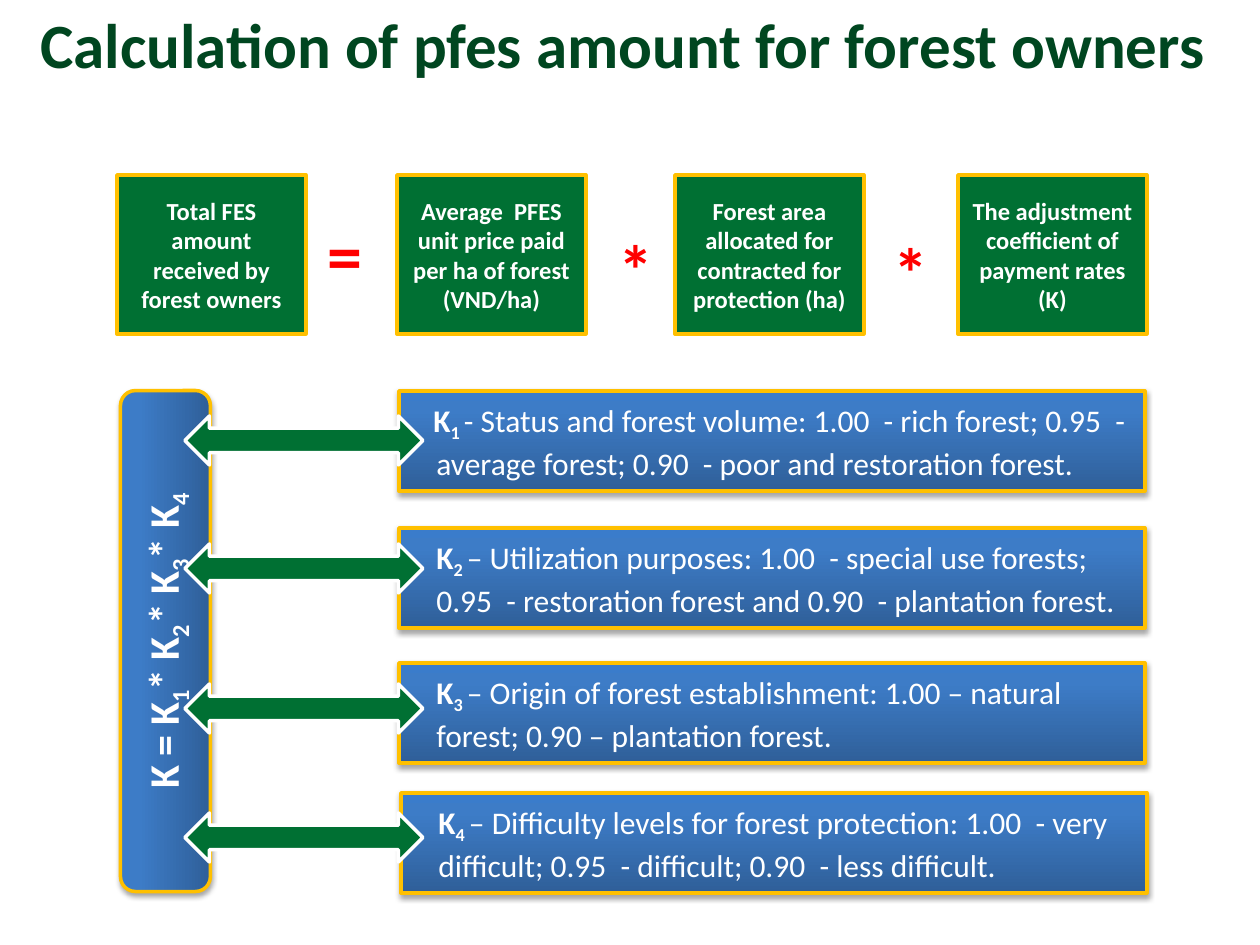
"""Build a slide explaining how the PFES amount for forest owners is calculated."""
import pptx
import pptx.dml.color
import pptx.enum.shapes
import pptx.enum.text
import pptx.oxml.ns
import pptx.util
from lxml import etree

SHAPE = pptx.enum.shapes.MSO_SHAPE
ALIGN = pptx.enum.text.PP_ALIGN
ANCHOR = pptx.enum.text.MSO_ANCHOR
qn = pptx.oxml.ns.qn

THEME = {
    "font": "Calibri",
    "green": "007033", "title": "004620", "gold": "FFC000",
    "white": "FFFFFF", "red": "FF0000", "shadow": "000000",
    "blues": [(0, "2F5F99"), (80, "3D7CC7"), (100, "3A7CCB")],
    "title_size": 36, "term_size": 14, "operator_size": 40,
    "factor_size": 18, "formula_size": 24, "line": 2,
}

TITLE = "Calculation of pfes amount for forest owners "
TERMS = [
    (117, "Total FES amount received by forest owners"),
    (397, "Average  PFES unit price paid per ha of forest (VND/ha)"),
    (675, "Forest area allocated for contracted for protection (ha)"),
    (958, "The adjustment coefficient of payment rates (K)"),
]
OPERATORS = [(315, 205, "="), (606, 219, "*"), (881, 222, "*")]
FACTORS = [
    (399, 391, 416, -3, "- Status and forest volume: 1.00  - rich forest; 0.95  - "
     "average forest; 0.90  - poor and restoration forest."),
    (399, 528, 544, 0, "– Utilization purposes: 1.00  - special use forests; 0.95  - "
     "restoration forest and 0.90  - plantation forest."),
    (399, 663, 684, 0, "– Origin of forest establishment: 1.00 – natural forest; "
     "0.90 – plantation forest."),
    (401, 793, 813, 0, "– Difficulty levels for forest protection: 1.00  - very "
     "difficult; 0.95  - difficult; 0.90  - less difficult."),
]


def px(n):
    return round(n * 914400 / 126)


def rgb(value):
    return pptx.dml.color.RGBColor.from_string(value)


def write(sp, runs, size, color="white", align=ALIGN.CENTER, anchor=ANCHOR.MIDDLE, wrap=True):
    tf = sp.text_frame
    tf.word_wrap, tf.vertical_anchor = wrap, anchor
    p = tf.paragraphs[0]
    p.alignment = align
    for text, bold, subscript in runs:
        r = p.add_run()
        r.text = text
        style = {"name": THEME["font"], "size": pptx.util.Pt(THEME[size]), "bold": bold}
        for name, value in style.items():
            setattr(r.font, name, value)
        r.font.color.rgb = rgb(THEME[color])
        if subscript:
            r._r.get_or_add_rPr().set("baseline", "-25000")
    return p


def add_box(s, kind, box, fill, line=None):
    sp = s.shapes.add_shape(kind, *map(px, box))
    sp.shadow.inherit = False
    sp.fill.solid()
    sp.fill.fore_color.rgb = rgb(THEME[fill])
    if line:
        sp.line.color.rgb = rgb(THEME[line])
        sp.line.width = pptx.util.Pt(THEME["line"])
    else:
        sp.line.fill.background()
    return sp


def add_color(parent, value, alpha=None):
    color = etree.SubElement(parent, qn("a:srgbClr"), val=value)
    if alpha:
        etree.SubElement(color, qn("a:alpha"), val=str(alpha * 1000))


def add_blue_box(s, kind, box):
    sp = add_box(s, kind, box, "green", "gold")
    sp.fill.gradient()
    sp.fill.gradient_angle = 90
    spPr = sp._element.spPr
    stops = spPr.find(qn("a:gradFill")).find(qn("a:gsLst"))
    for stop in list(stops):
        stops.remove(stop)
    for position, value in THEME["blues"]:
        add_color(etree.SubElement(stops, qn("a:gs"), pos=str(position * 1000)), value)
    shadow = etree.SubElement(
        spPr.find(qn("a:effectLst")), qn("a:outerShdw"), blurRad=str(pptx.util.Pt(3.1)),
        dist=str(pptx.util.Pt(1.8)), dir="5400000", rotWithShape="0")
    add_color(shadow, THEME["shadow"], 35)
    return sp


def main():
    prs = pptx.Presentation()
    prs.slide_width, prs.slide_height = px(1260), px(945)
    s = prs.slides.add_slide(prs.slide_layouts[6])

    sp = add_box(s, SHAPE.RECTANGLE, (0, -1, 1260, 89), "white")
    solid = sp._element.spPr.find(qn("a:solidFill"))
    etree.SubElement(solid[0], qn("a:alpha"), val="70000")
    write(sp, [(TITLE, True, False)], "title_size", "title", anchor=ANCHOR.TOP)

    for x, text in TERMS:
        sp = add_box(s, SHAPE.RECTANGLE, (x, 175, 189, 159), "green", "gold")
        write(sp, [(text, True, False)], "term_size")
    for x, y, sign in OPERATORS:
        sp = s.shapes.add_textbox(*map(px, (x, y, 59, 97)))
        write(sp, [(sign, True, False)], "operator_size", "red", anchor=ANCHOR.TOP, wrap=False)

    formula = []
    for i, (x, y, _, indent, text) in enumerate(FACTORS, 1):
        sp = add_blue_box(s, SHAPE.RECTANGLE, (x, y, 746, 100))
        runs = [("K", True, False), (f"{i} ", True, True), (text, False, False)]
        p = write(sp, runs, "factor_size", align=ALIGN.LEFT)
        pPr = p._p.get_or_add_pPr()
        pPr.set("marL", str(px(25)))
        pPr.set("indent", str(px(indent)))
        formula += [("K = K" if i == 1 else "* K", True, False), (str(i), True, True)]

    sp = add_blue_box(s, SHAPE.ROUNDED_RECTANGLE, (-85, 596, 501, 90))
    sp.rotation = 270
    write(sp, formula, "formula_size")

    for _, _, y, _, _ in FACTORS:
        add_box(s, SHAPE.LEFT_RIGHT_ARROW, (185, y, 238, 49), "green", "white")

    prs.save("out.pptx")


if __name__ == "__main__":
    main()
